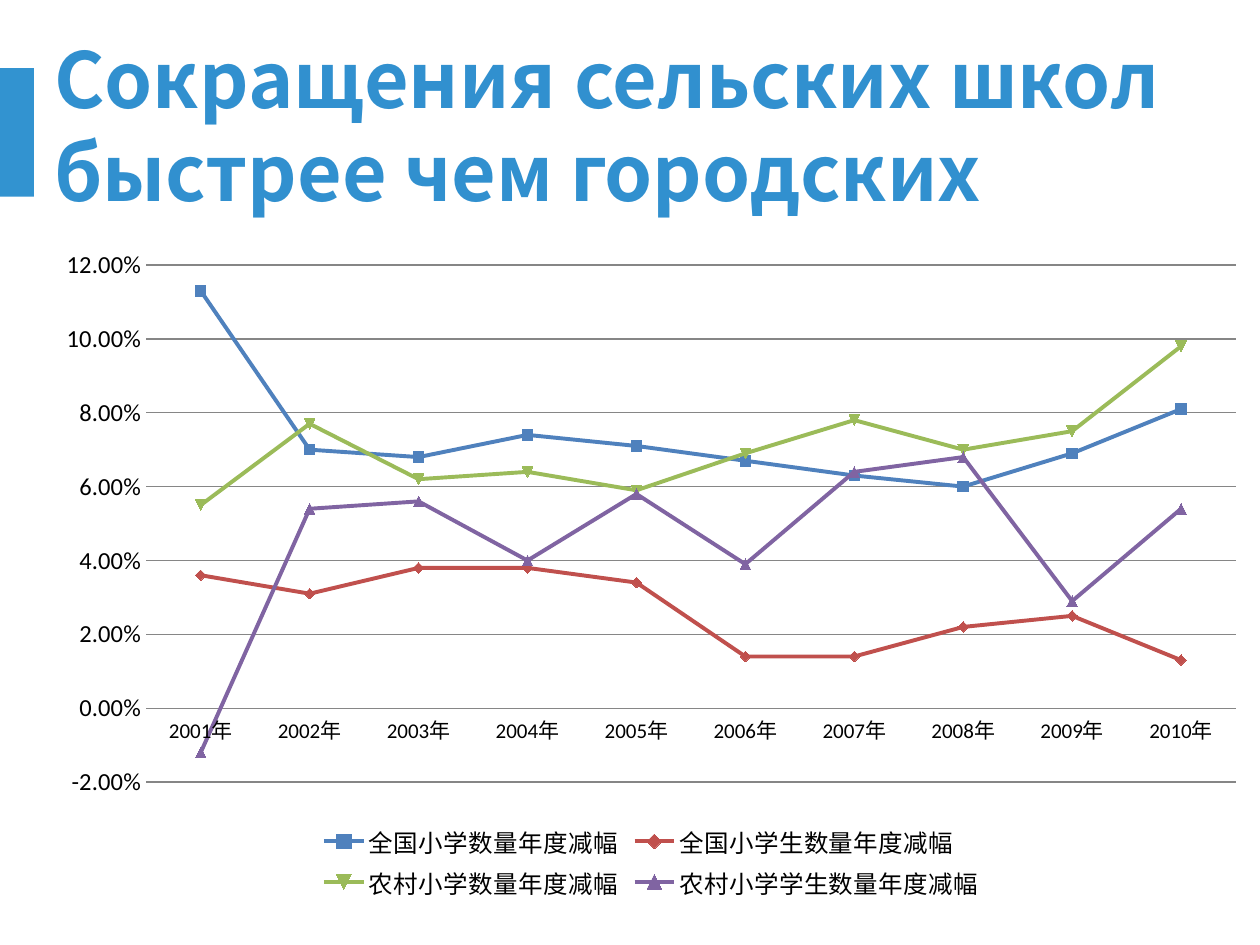
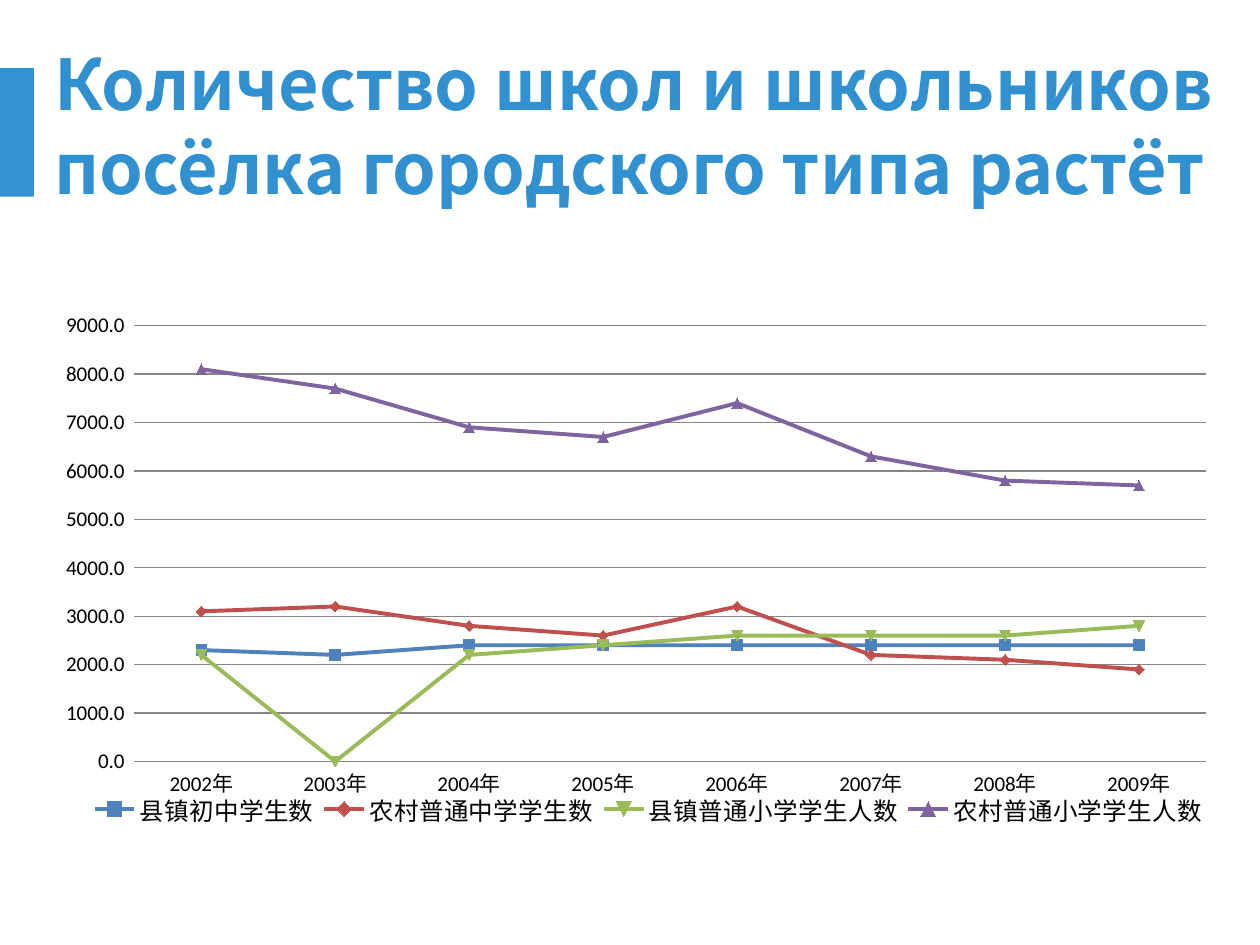
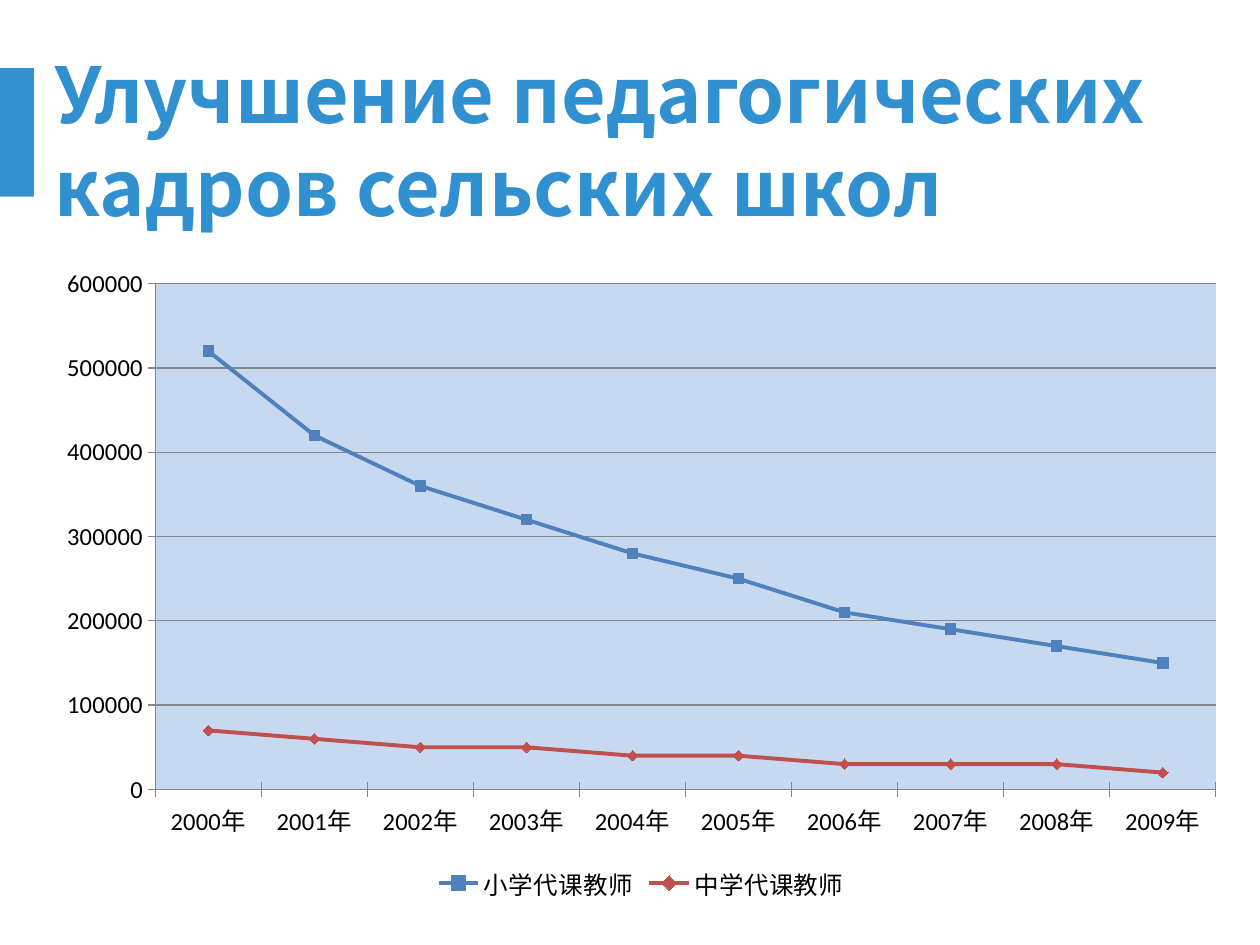
from dataclasses import dataclass

from lxml import etree
from pptx import Presentation
from pptx.chart.data import CategoryChartData
from pptx.dml.color import RGBColor
from pptx.enum.chart import XL_CHART_TYPE, XL_LEGEND_POSITION, XL_TICK_MARK
from pptx.enum.shapes import MSO_SHAPE
from pptx.enum.text import MSO_ANCHOR, PP_ALIGN
from pptx.oxml.ns import qn
from pptx.util import Inches, Pt

LINE_MARKERS = XL_CHART_TYPE.LINE_MARKERS
LEGEND_BOTTOM = XL_LEGEND_POSITION.BOTTOM
TICK_NONE, TICK_CROSS = XL_TICK_MARK.NONE, XL_TICK_MARK.CROSS
RECTANGLE = MSO_SHAPE.RECTANGLE
MIDDLE = MSO_ANCHOR.MIDDLE
LEFT = PP_ALIGN.LEFT
TITLE_ONLY = 5


@dataclass(frozen=True)
class Theme:
    band: str = "3293D0"
    title: str = "3190CF"
    text: str = "000000"
    grid: str = "868686"
    series: tuple = ("4F81BD", "C0504D", "9BBB59", "8064A2")
    title_font: str = "Noto Sans CJK SC"
    chart_font: str = "Calibri"
    title_leading: float = 1.2
    legend_size: int = 14
    line_width: float = 2.25
    grid_width: float = 0.75
    marker_size: int = 6


THEME = Theme()


def years(first, last):
    return [f"{year}年" for year in range(first, last + 1)]


PAGES = [
    {
        "title": "Сокращения сельских школ быстрее чем городских",
        "title_box": (0.33, 0.49, 9.67, 1.62),
        "title_size": 44,
        "title_bottom": 0.78,
        "chart_box": (0.34, 1.87, 9.66, 5.31),
        "plot": (0.085, 0.044, 0.895, 0.773),
        "sizes": (12, 14),
        "scale": (-0.02, 0.12, 0.02),
        "number_format": "0.00%",
        "categories": years(2001, 2010),
        "series": {
            "全国小学数量年度减幅":
                (0.113, 0.07, 0.068, 0.074, 0.071, 0.067, 0.063, 0.06, 0.069, 0.081),
            "全国小学生数量年度减幅":
                (0.036, 0.031, 0.038, 0.038, 0.034, 0.014, 0.014, 0.022, 0.025, 0.013),
            "农村小学数量年度减幅":
                (0.055, 0.077, 0.062, 0.064, 0.059, 0.069, 0.078, 0.07, 0.075, 0.098),
            "农村小学学生数量年度减幅":
                (-0.012, 0.054, 0.056, 0.04, 0.058, 0.039, 0.064, 0.068, 0.029, 0.054),
        },
    },
    {
        "title": "Количество школ и школьников посёлка городского типа растёт",
        "title_box": (0.33, 0.49, 9.67, 1.62),
        "title_size": 40,
        "title_bottom": 0.78,
        "chart_box": (0.34, 1.88, 9.43, 5),
        "plot": (0.077, 0.141, 0.902, 0.692),
        "legend": (0.035, 0.88, 0.95, 0.05),
        "sizes": (12, 12),
        "scale": (0, 9000, 1000),
        "number_format": "0.0_ ",
        "categories": years(2002, 2009),
        "series": {
            "县镇初中学生数": (2300, 2200, 2400, 2400, 2400, 2400, 2400, 2400),
            "农村普通中学学生数": (3100, 3200, 2800, 2600, 3200, 2200, 2100, 1900),
            "县镇普通小学学生人数": (2200, 0, 2200, 2400, 2600, 2600, 2600, 2800),
            "农村普通小学学生人数": (8100, 7700, 6900, 6700, 7400, 6300, 5800, 5700),
        },
    },
    {
        "title": "Улучшение педагогических кадров сельских школ",
        "title_box": (0.33, 0.55, 9, 1.01),
        "title_size": 44,
        "title_bottom": 0.05,
        "chart_box": (0.34, 2.03, 9.5, 5.16),
        "plot": (0.094, 0.043, 0.886, 0.778),
        "plot_fill": "C6D9F1",
        "sizes": (14, 14),
        "scale": (0, 600000, 100000),
        "number_format": "General",
        "ticks": True,
        "categories": years(2000, 2009),
        "series": {
            "小学代课教师": (520000, 420000, 360000, 320000, 280000,
                       250000, 210000, 190000, 170000, 150000),
            "中学代课教师": (70000, 60000, 50000, 50000, 40000,
                       40000, 30000, 30000, 30000, 20000),
        },
    },
]


def set_all(target, values):
    for name, value in values.items():
        setattr(target, name, value)


def color(code):
    return RGBColor.from_string(code)


def inches(box):
    return [Inches(length) for length in box]


def style_font(font, size, code, name, bold=False):
    set_all(font, {"size": Pt(size), "name": name, "bold": bold})
    font.color.rgb = color(code)


def style_line(line, code, width):
    line.color.rgb = color(code)
    line.width = Pt(width)


def add_band(page, layout):
    """Draw the side band once and move it to the layout all pages share."""
    band = page.shapes.add_shape(RECTANGLE, *inches((0, 0.54, 0.27, 1.02)))
    band.shadow.inherit = False
    band.fill.solid()
    band.fill.fore_color.rgb = color(THEME.band)
    band.line.fill.background()
    layout.shapes.element.insert(2, band.element)


def fill_title(title, box, text, size, bottom):
    left, top, width, height = inches(box)
    set_all(title, {"left": left, "top": top, "width": width, "height": height})
    frame = title.text_frame
    frame.text = text
    set_all(frame, {
        "word_wrap": True, "vertical_anchor": MIDDLE,
        "margin_left": Inches(0.1), "margin_right": Inches(0.1),
        "margin_top": Inches(0.15), "margin_bottom": Inches(bottom),
    })
    para = frame.paragraphs[0]
    set_all(para, {"alignment": LEFT, "line_spacing": Pt(size * THEME.title_leading)})
    span = para.runs[0]
    style_font(span.font, size, THEME.title, THEME.title_font, bold=True)
    east_asian = etree.SubElement(span.font._element, qn("a:ea"))
    east_asian.set("typeface", THEME.title_font)


def set_layout(part, box, inner=False):
    """Place a chart part by fractions of the chart's width and height."""
    for old in part.findall(qn("c:layout")):
        part.remove(old)
    layout = etree.Element(qn("c:layout"))
    manual = etree.SubElement(layout, qn("c:manualLayout"))
    settings = {"layoutTarget": "inner"} if inner else {}
    settings.update({"xMode": "edge", "yMode": "edge"})
    settings.update(zip("xywh", box))
    for name, value in settings.items():
        etree.SubElement(manual, qn(f"c:{name}")).set("val", str(value))
    position = part.find(qn("c:legendPos"))
    part.insert(0 if position is None else part.index(position) + 1, layout)


def fill_plot_area(plot_area, code):
    properties = etree.SubElement(plot_area, qn("c:spPr"))
    solid = etree.SubElement(properties, qn("a:solidFill"))
    etree.SubElement(solid, qn("a:srgbClr")).set("val", code)


def style_axes(chart, spec):
    tick = TICK_CROSS if spec.get("ticks") else TICK_NONE
    axes = (chart.category_axis, chart.value_axis)
    for axis, size in zip(axes, spec["sizes"]):
        set_all(axis, {"major_tick_mark": tick, "minor_tick_mark": TICK_NONE})
        style_font(axis.tick_labels.font, size, THEME.text, THEME.chart_font)
        style_line(axis.format.line, THEME.grid, THEME.grid_width)
    values = chart.value_axis
    low, high, step = spec["scale"]
    set_all(values, {"minimum_scale": low, "maximum_scale": high,
                     "major_unit": step, "has_major_gridlines": True})
    style_line(values.major_gridlines.format.line, THEME.grid, THEME.grid_width)
    set_all(values.tick_labels, {"number_format": spec["number_format"],
                                 "number_format_is_linked": False})
    if not spec.get("ticks"):
        values.format.line.fill.background()


def style_series(series, code):
    series.smooth = False
    style_line(series.format.line, code, THEME.line_width)
    marker = series.marker
    marker.size = THEME.marker_size
    marker.format.fill.solid()
    marker.format.fill.fore_color.rgb = color(code)
    style_line(marker.format.line, code, THEME.grid_width)


def add_line_chart(page, spec):
    data = CategoryChartData(number_format=spec["number_format"])
    data.categories = spec["categories"]
    for name, values in spec["series"].items():
        data.add_series(name, values)
    frame = page.shapes.add_chart(LINE_MARKERS, *inches(spec["chart_box"]), data)
    chart = frame.chart
    set_all(chart, {"has_title": False, "has_legend": True})
    style_font(chart.font, THEME.legend_size, THEME.text, THEME.chart_font)
    style_axes(chart, spec)
    chart.plots[0].vary_by_categories = False
    for series, code in zip(chart.plots[0].series, THEME.series):
        style_series(series, code)

    legend = chart.legend
    set_all(legend, {"position": LEGEND_BOTTOM, "include_in_layout": False})
    style_font(legend.font, THEME.legend_size, THEME.text, THEME.chart_font)
    if "legend" in spec:
        set_layout(chart.element.find(".//" + qn("c:legend")), spec["legend"])

    plot_area = chart.element.find(".//" + qn("c:plotArea"))
    set_layout(plot_area, spec["plot"], inner=True)
    if "plot_fill" in spec:
        fill_plot_area(plot_area, spec["plot_fill"])


def add_chart_page(deck, layout, spec):
    page = deck.slides.add_slide(layout)
    fill_title(page.shapes.title, spec["title_box"], spec["title"],
               spec["title_size"], spec["title_bottom"])
    add_line_chart(page, spec)
    return page


def main():
    deck = Presentation()
    set_all(deck, {"slide_width": Inches(10), "slide_height": Inches(7.5)})
    layout = deck.slide_layouts[TITLE_ONLY]
    pages = [add_chart_page(deck, layout, spec) for spec in PAGES]
    add_band(pages[0], layout)
    deck.save("out.pptx")


if __name__ == "__main__":
    main()
